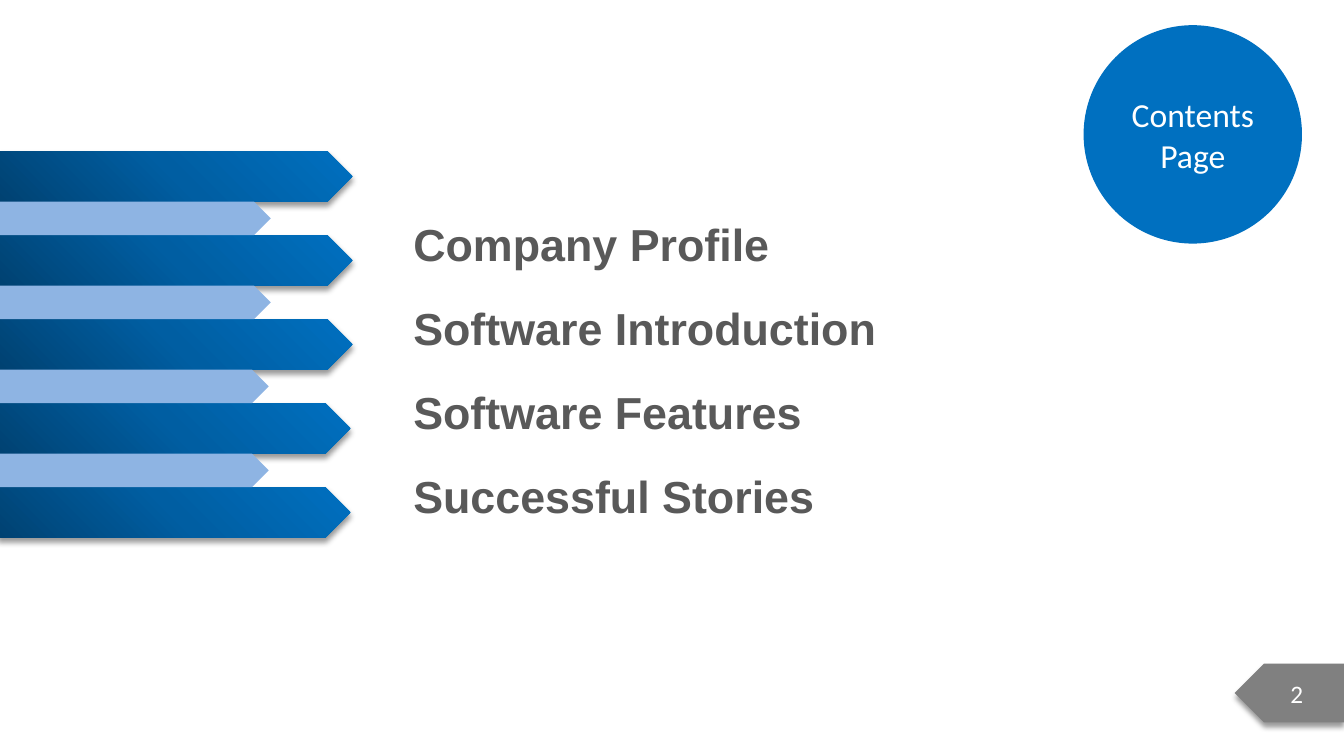
from lxml.etree import SubElement
from pptx import Presentation
from pptx.dml.color import RGBColor
from pptx.enum.shapes import MSO_SHAPE
from pptx.enum.text import MSO_ANCHOR, MSO_AUTO_SIZE, PP_ALIGN
from pptx.oxml import parse_xml
from pptx.oxml.ns import nsdecls, qn
from pptx.util import Pt

COLORS = {
    "blue": "0070C0", "mid": "005EA2", "navy": "004272", "pale": "8EB4E3",
    "gray": "808080", "text": "595959", "white": "FFFFFF", "shadow": "000000",
}
TOPICS = ["Company Profile", "Software Introduction",
          "Software Features", "Successful Stories"]


def place(shape, x, y, w, h):
    shape.left, shape.top, shape.width, shape.height = Pt(x), Pt(y), Pt(w), Pt(h)


def write(p, text, size=24, font="Calibri", color="white", bold=False,
          align=PP_ALIGN.CENTER, spacing=1.0, after=0):
    p.alignment, p.line_spacing = align, spacing
    p.space_before, p.space_after = Pt(0), Pt(after)
    r = p.add_run()
    r.text = text
    r.font.size, r.font.name, r.font.bold = Pt(size), font, bold
    r.font.color.rgb = RGBColor.from_string(COLORS[color])


def add_plain(s, kind, x, y, w, h, color):
    sp = s.shapes.add_shape(kind, Pt(x), Pt(y), Pt(w), Pt(h))
    sp.shadow.inherit = False
    sp.fill.solid()
    sp.fill.fore_color.rgb = RGBColor.from_string(COLORS[color])
    sp.line.fill.background()
    return sp


def add_shadow(sp):
    effects = sp.element.spPr.find(qn("a:effectLst"))
    effects.append(parse_xml(
        f'<a:outerShdw {nsdecls("a")} blurRad="{Pt(4)}" dist="{Pt(3)}" '
        f'dir="5400000" rotWithShape="0"><a:srgbClr val="{COLORS["shadow"]}">'
        '<a:alpha val="40000"/></a:srgbClr></a:outerShdw>'))


def add_radial_fill(sp):
    stops = "".join(
        f'<a:gs pos="{pos}"><a:srgbClr val="{COLORS[name]}"/></a:gs>'
        for pos, name in ((0, "navy"), (50000, "mid"), (100000, "blue")))
    grad = parse_xml(
        f'<a:gradFill {nsdecls("a")} rotWithShape="1"><a:gsLst>{stops}</a:gsLst>'
        '<a:path path="circle"><a:fillToRect t="100000" r="100000"/></a:path>'
        '</a:gradFill>')
    spPr = sp.element.spPr
    spPr.replace(spPr.find(qn("a:solidFill")), grad)


def add_arrow_stack(s, x, y, w, count=5, bar=36, gap=24):
    pitch = bar + gap
    nudge = 1.5  # the lower bars start slightly further left
    for i in range(count):
        left = x if i < 3 else x - nudge
        sp = add_plain(s, MSO_SHAPE.PENTAGON, left, y + i * pitch, w, bar, "blue")
        add_radial_fill(sp)
        add_shadow(sp)
    for i in range(count - 1):
        left = x if i < 2 else x - nudge
        add_plain(s, MSO_SHAPE.PENTAGON, left, y + bar + i * pitch,
                  w - 58.5, gap, "pale")


def add_title_circle(s, x, y, size):
    add_plain(s, MSO_SHAPE.OVAL, x, y, size, size, "blue")
    title = s.shapes.title
    inset = size * 0.15
    place(title, x + inset, y + inset, size - 2 * inset, size - 2 * inset)
    s.shapes.element.append(title.element)  # bring the title above the circle
    tf = title.text_frame
    tf.word_wrap, tf.auto_size = True, MSO_AUTO_SIZE.NONE
    tf.vertical_anchor = MSO_ANCHOR.MIDDLE
    write(tf.paragraphs[0], "Contents Page")


def add_topics(s, x, y, w, h):
    body = s.placeholders[1]
    place(body, x, y, w, h)
    tf = body.text_frame
    tf.word_wrap, tf.auto_size = True, MSO_AUTO_SIZE.NONE
    tf.vertical_anchor = MSO_ANCHOR.TOP
    tf.margin_top = Pt(7.4)
    for i, topic in enumerate(TOPICS):
        p = tf.add_paragraph() if i else tf.paragraphs[0]
        pPr = p._p.get_or_add_pPr()
        pPr.set("marL", "0")
        pPr.set("indent", "0")
        SubElement(pPr, qn("a:buNone"))
        write(p, topic, size=32, font="Arial", color="text", bold=True,
              align=PP_ALIGN.LEFT, spacing=1.5, after=2.4)


def add_page_tag(s, x, y, w, h):
    sp = add_plain(s, MSO_SHAPE.PENTAGON, x, y, w, h, "gray")
    sp.element.spPr.find(qn("a:xfrm")).set("flipH", "1")
    add_shadow(sp)
    tf = sp.text_frame
    tf.vertical_anchor = MSO_ANCHOR.MIDDLE
    write(tf.paragraphs[0], "2", size=18)


def main():
    prs = Presentation()
    prs.slide_width, prs.slide_height = Pt(960), Pt(540)
    s = prs.slides.add_slide(prs.slide_layouts[1])
    add_title_circle(s, 774, 18, 156)
    add_topics(s, 288, 128, 348, 298)
    add_arrow_stack(s, 0, 108, 252)
    add_page_tag(s, 882, 474, 78, 42)
    prs.save("out.pptx")


if __name__ == "__main__":
    main()
